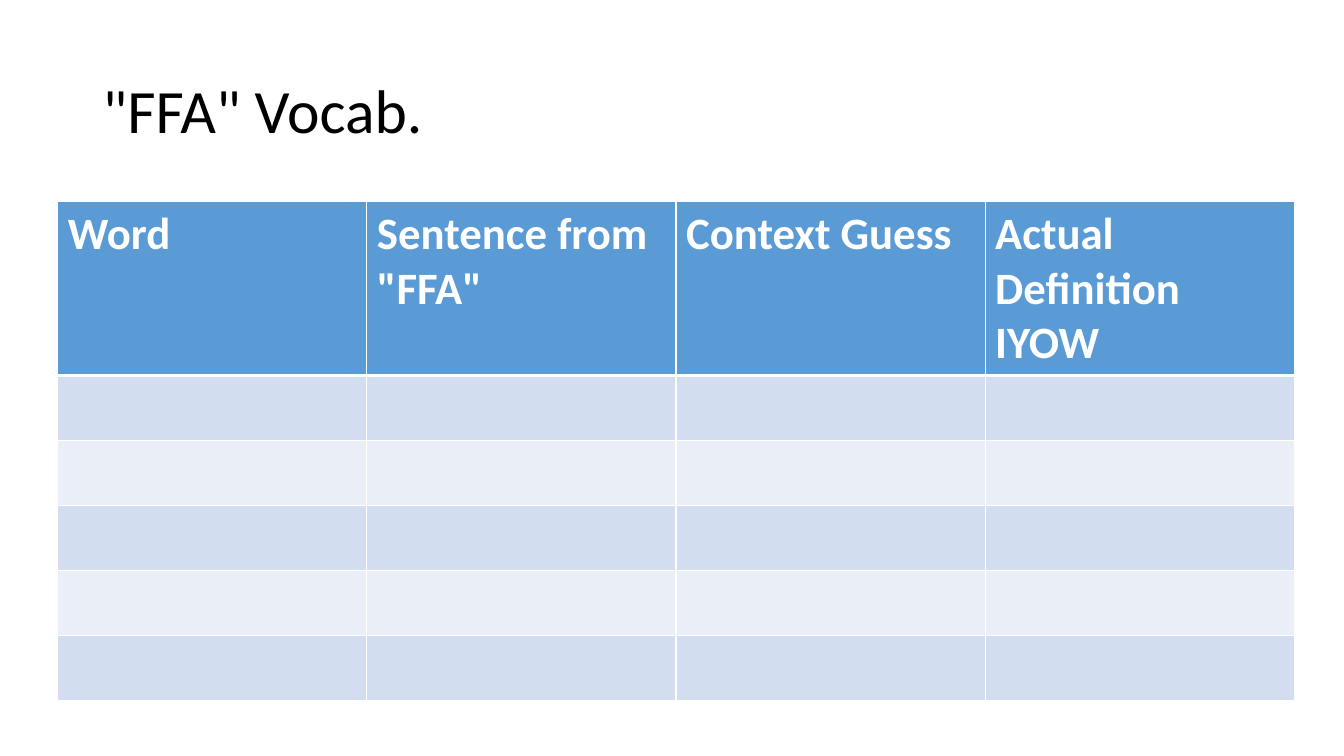
from typing import NamedTuple

from lxml.etree import SubElement
from pptx import Presentation
from pptx.dml.color import RGBColor
from pptx.enum.text import MSO_ANCHOR
from pptx.oxml.ns import qn
from pptx.util import Inches, Pt

WIDE, HIGH = Inches(13.33), Inches(7.5)
FONT, WHITE = "Calibri", "FFFFFF"
HEADS = ("Word", 'Sentence from "FFA"', "Context Guess", "Actual Definition IYOW")


class Band(NamedTuple):
    """A table row: fill, height in percent, line widths in points, texts."""
    fill: str
    tall: float
    top: int
    base: int
    texts: tuple[str, ...]


BLANKS = ("",) * len(HEADS)
BANDS = [Band("5B9BD5", 23, 1, 3, HEADS)] + [
    Band(("D2DEEF", "EAEFF7")[i % 2], 8.6, 1 if i else 3, 1, BLANKS)
    for i in range(5)
]


def across(share: float) -> int:
    return round(WIDE * share / 100)


def down(share: float) -> int:
    return round(HIGH * share / 100)


def tint(code: str) -> RGBColor:
    return RGBColor.from_string(code)


def write(para, text: str, size: int, code: str, bold: bool = False) -> None:
    para.text = text
    para.font.name = FONT
    para.font.size = Pt(size)
    para.font.bold = bold
    para.font.color.rgb = tint(code)


def edge(cell, top: int, base: int) -> None:
    """Draw white borders; the lines must precede the fill in the cell's XML."""
    props = cell._tc.get_or_add_tcPr()
    for side, width in (("L", 1), ("R", 1), ("T", top), ("B", base)):
        line = SubElement(props, qn(f"a:ln{side}"), w=str(Pt(width)))
        fill = SubElement(line, qn("a:solidFill"))
        SubElement(fill, qn("a:srgbClr"), val=WHITE)


def add_title(slide) -> None:
    box = slide.shapes.add_textbox(across(6.9), down(5.33), across(86.25), down(19.33))
    frame = box.text_frame
    frame.word_wrap = True
    frame.vertical_anchor = MSO_ANCHOR.MIDDLE
    para = frame.paragraphs[0]
    para.line_spacing = 0.9
    write(para, '"FFA" Vocab.', 44, "000000")


def add_grid(slide) -> None:
    step = 23
    tall = sum(band.tall for band in BANDS)
    grid = slide.shapes.add_table(
        len(BANDS), len(HEADS), across(4.3), down(26.67),
        across(step * len(HEADS)), down(tall),
    ).table
    grid.horz_banding = False
    for col in grid.columns:
        col.width = across(step)
    for row, band in zip(grid.rows, BANDS):
        row.height = down(band.tall)
        for cell, text in zip(row.cells, band.texts):
            edge(cell, band.top, band.base)
            cell.fill.solid()
            cell.fill.fore_color.rgb = tint(band.fill)
            if text:
                write(cell.text_frame.paragraphs[0], text, 32, WHITE, True)


def main() -> None:
    deck = Presentation()
    deck.slide_width, deck.slide_height = WIDE, HIGH
    slide = deck.slides.add_slide(deck.slide_layouts[6])
    add_title(slide)
    add_grid(slide)
    deck.save("out.pptx")


if __name__ == "__main__":
    main()
